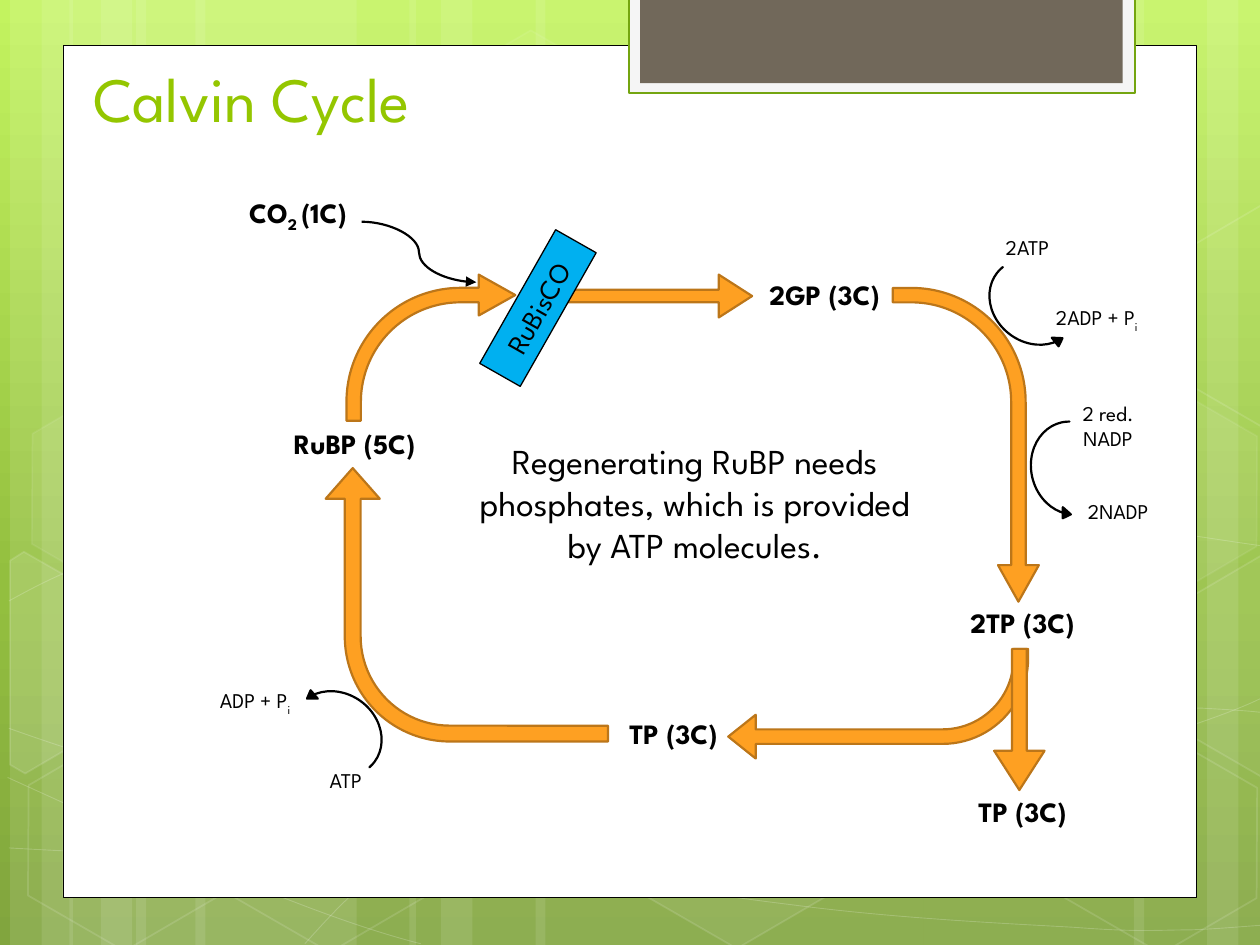
from copy import deepcopy
from pptx import Presentation
from pptx import util as u
from pptx.dml.color import RGBColor
from pptx.enum import shapes, text
from pptx.oxml.ns import qn
from lxml import etree

INCH = 2.54  # layout numbers are in inches, lengths are given in Cm
COLORS = dict(white="FFFFFF", black="000000", orange="FEA022", brown="BC7619",
              blue="00B0F0", lime="94C600", green="74A510", pale="F5F5F5", taupe="71685A")
KIND = shapes.MSO_SHAPE


def style(shape, fill=None, line=None, width=1.25, fill_alpha=100, line_alpha=100):
    """Set fill and outline; alpha values are percentages."""
    shape.shadow.inherit = False
    for target, color, alpha in ((shape.fill, fill, fill_alpha), (shape.line.fill, line, line_alpha)):
        if color is None:
            target.background()
            continue
        target.solid()
        target.fore_color.rgb = RGBColor.from_string(COLORS[color])
        if alpha < 100:
            parent = shape.element.spPr
            if target is not shape.fill:
                parent = parent.find(qn("a:ln"))
            clr = parent.find(qn("a:solidFill")).find(qn("a:srgbClr"))
            etree.SubElement(clr, qn("a:alpha")).set("val", str(alpha * 1000))
    if line:
        shape.line.width = u.Pt(width)


def write(shape, words, size, color="black", bold=False, align=text.PP_ALIGN.CENTER):
    """Fill a shape with text; pieces between underscores are subscripts."""
    frame = shape.text_frame
    frame.word_wrap = True
    for row, line in enumerate(words.split("\n")):
        para = frame.add_paragraph() if row else frame.paragraphs[0]
        para.alignment = align
        for index, piece in enumerate(line.split("_")):
            if not piece:
                continue
            span = para.add_run()
            span.text = piece
            for name, value in dict(name="League Spartan", size=u.Pt(size), bold=bold).items():
                setattr(span.font, name, value)
            span.font.color.rgb = RGBColor.from_string(COLORS[color])
            if index % 2:
                span.font._element.set("baseline", "-25000")


deck = Presentation()
deck.slide_width, deck.slide_height = u.Cm(10 * INCH), u.Cm(7.5 * INCH)
page = deck.slides.add_slide(deck.slide_layouts[6])

# Background gradient
backdrop = page.background.fill
backdrop.gradient()
backdrop.gradient_angle = 270
stop_list = next(page.element.iter(qn("a:gsLst")))
stop_list.append(deepcopy(stop_list[0]))
for stop, (position, color) in zip(backdrop.gradient_stops,
                                   ((0, "C3F35F"), (0.62, "93BF3F"), (1, "81A53E"))):
    stop.position = position
    stop.color.rgb = RGBColor.from_string(color)

# Translucent vertical bands
for left, width in ((1.08, 1.75), (0.08, 0.5), (0.33, 0.83), (1.55, 1.75), (0.55, 0.5), (0.8, 0.83),
                    (7.33, 1.75), (9.58, 0.5), (9, 0.83), (4.25, 3.08), (3.25, 0.5), (3.5, 0.83)):
    band = page.shapes.add_shape(KIND.RECTANGLE, u.Cm(left * INCH), 0,
                                 u.Cm(width * INCH), deck.slide_height)
    style(band, "white", fill_alpha=10)

# Faint waves: a start point, then two control points and an end point per segment
waves = (
    [(0.07, 6.73), (0.61, 6.76), (1.15, 6.79), (1.9, 6.78), (2.65, 6.77), (3.58, 6.75), (4.58, 6.65),
     (5.58, 6.55), (7, 6.36), (7.92, 6.17), (8.83, 5.98), (9.77, 5.68), (10.07, 5.51)],
    [(0.07, 4.77), (0.36, 4.61), (0.65, 4.46), (1.21, 4.31), (1.78, 4.16), (2.59, 3.94), (3.47, 3.87),
     (4.36, 3.8), (5.44, 3.79), (6.54, 3.87), (7.64, 3.95), (9.47, 4.26), (10.07, 4.34)],
    [(0.06, 6.17), (1.27, 6.72), (2.47, 7.27), (3.34, 7.49)],
    [(0.07, 5.78), (0.38, 5.89), (0.7, 6), (1.28, 6.16), (1.86, 6.31), (2.73, 6.56), (3.57, 6.73),
     (4.4, 6.9), (5.45, 7.08), (6.28, 7.18), (7.11, 7.29), (8, 7.33), (8.53, 7.36),
     (9.05, 7.4), (9.19, 7.38), (9.45, 7.38), (9.71, 7.37), (9.89, 7.35), (10.07, 7.34)],
    [(2.42, 7.49), (2.6, 7.29), (2.78, 7.09), (3.02, 6.91), (3.26, 6.73), (3.6, 6.53), (3.88, 6.39),
     (4.16, 6.25), (4.33, 6.19), (4.7, 6.09), (5.06, 5.99), (5.73, 5.85), (6.08, 5.78),
     (6.44, 5.71), (6.49, 5.71), (6.8, 5.69), (7.11, 5.66), (7.6, 5.63), (7.94, 5.62),
     (8.29, 5.61), (8.86, 5.62), (8.86, 5.62), (9.08, 5.62), (9.31, 5.62), (9.53, 5.62),
     (9.71, 5.63), (9.88, 5.64), (9.97, 5.65), (10.06, 5.66), (10.03, 5.65), (10.06, 5.66)],
)
for wave in waves:
    points = [(u.Cm(x * INCH), u.Cm(y * INCH)) for x, y in wave]
    builder = page.shapes.build_freeform(*points[0])
    builder.add_line_segments(points[1:], close=False)
    ripple = builder.convert_to_shape()
    style(ripple, line="white", width=0.5, line_alpha=20)
    # Join each three straight steps into one Bézier segment
    outline = next(ripple.element.iter(qn("a:path")))
    steps = outline.findall(qn("a:lnTo"))
    for first in range(0, len(steps), 3):
        curve = etree.SubElement(outline, qn("a:cubicBezTo"))
        for step in steps[first:first + 3]:
            curve.append(step[0])
            outline.remove(step)

# Hexagons, whole and cut by the page edge
for left, top, fill_alpha, line_alpha in (
        (3.34, 0.36, 4, 8), (4.97, 5.89, 6, 12), (0.11, 5.91, 0, 12), (0.14, 3.12, 7, 8),
        (1.74, 5.92, 0, 12), (7.53, 4.53, 10, 12), (8.34, 5.93, 0, 12), (8.34, 3.14, 7, 8)):
    cell = page.shapes.add_shape(KIND.HEXAGON, *(u.Cm(v * INCH) for v in (left, top, 1.75, 1.52)))
    cell.adjustments[0] = 0.285
    cell.rotation = 30
    style(cell, "white" if fill_alpha else None, "white", 1, fill_alpha, line_alpha)
for fill_alpha, corners in (
        (10, [(0.08, 4.45), (0.19, 4.38), (0.96, 4.82), (0.95, 5.7), (0.2, 6.14), (0.08, 6.07)]),
        (4, [(9.26, 4.85), (10.01, 4.41), (10.09, 4.46), (10.09, 6.13), (10.02, 6.17), (9.26, 5.73)]),
        (0, [(9.26, 2.07), (10.01, 1.63), (10.1, 1.68), (10.09, 3.35), (10.02, 3.39), (9.26, 2.95)])):
    points = [(u.Cm(x * INCH), u.Cm(y * INCH)) for x, y in corners]
    builder = page.shapes.build_freeform(*points[0])
    builder.add_line_segments(points[1:])
    style(builder.convert_to_shape(), "white" if fill_alpha else None, "white", 1, fill_alpha, 12)

# White panel and top tab
for place, fill, line, width in (((0.5, 0.36, 9, 6.76), "white", "black", 0.5),
                                 ((4.99, -0.02, 4.02, 0.76), "pale", "green", 1.25),
                                 ((5.08, -0.02, 3.83, 0.68), "taupe", None, 0)):
    panel = page.shapes.add_shape(KIND.RECTANGLE, *(u.Cm(v * INCH) for v in place))
    style(panel, fill, line, width)

# Title
title = page.shapes.add_textbox(*(u.Cm(v * INCH) for v in (0.64, 0.71, 7.68, 0.41)))
title.text_frame.vertical_anchor = text.MSO_ANCHOR.BOTTOM
write(title, "Calvin Cycle", 36, "lime", align=text.PP_ALIGN.LEFT)

# Cycle arrows, with the enzyme block lying over the first two
STRAIGHT, BEND = (0.291, 0.778), (0.099, 0.14, 0.25, 0.781)
for kind, place, turn, adjust in (
        (KIND.RIGHT_ARROW, (4.51, 2.18, 1.46, 0.34), 0, STRAIGHT),
        (KIND.BENT_ARROW, (2.75, 2.18, 1.34, 1.16), 0, BEND),
        (KIND.RECTANGLE, (3.66, 2.26, 1.22, 0.37), 299.6, ()),
        (KIND.BENT_ARROW, (6.42, 2.95, 2.49, 1.16), 90, BEND),
        (KIND.BENT_ARROW, (5.78, 5.15, 2.38, 0.87), 180, (0.133, 0.2, 0.25, 0.781)),
        (KIND.RIGHT_ARROW, (7.53, 5.51, 1.12, 0.4), 90, STRAIGHT),
        (KIND.BENT_ARROW, (2.62, 3.68, 2.17, 2.24), 270, (0.058, 0.099, 0.112, 0.385))):
    part = page.shapes.add_shape(kind, *(u.Cm(v * INCH) for v in place))
    part.rotation = turn
    for index, value in enumerate(adjust):
        part.adjustments[index] = value
    if kind == KIND.RECTANGLE:
        style(part, "blue", "black", 0.75)
        write(part, "RuBisCO", 16)
    else:
        style(part, "orange", "brown")

# Curved side arrows for cofactors
for left, top, turn in ((7.79, 2.03, 218.4), (8.09, 3.35, 257.6), (2.26, 5.46, 36.3)):
    arc = page.shapes.add_shape(KIND.CIRCULAR_ARROW, *(u.Cm(v * INCH) for v in (left, top, 0.83, 0.73)))
    for index, value in enumerate((0, 6.177, 201.788, 102.235, 0.06)):
        arc.adjustments[index] = value
    arc.rotation = turn
    arc.element.spPr.find(qn("a:xfrm")).set("flipH", "1")
    style(arc, "black", "black")

# Carbon dioxide inflow
inflow = page.shapes.add_connector(shapes.MSO_CONNECTOR.CURVE,
                                   *(u.Cm(v * INCH) for v in (2.87, 1.76, 3.78, 2.24)))
inflow.line.color.rgb = RGBColor.from_string(COLORS["black"])
inflow.line.width = u.Pt(1.25)
stroke = inflow.element.spPr.find(qn("a:ln"))
etree.SubElement(stroke, qn("a:tailEnd")).set("type", "triangle")
etree.SubElement(inflow.element.spPr, qn("a:effectLst"))

# Labels: compounds in bold, cofactors smaller
LABEL = 1.27
for size, bold, height, labels in (
        (16, True, 0.37, (("RuBP (5C)", 2.18, 3.34), ("CO_2 _(1C)", 1.73, 1.5), ("2GP (3C)", 5.91, 2.15),
                          ("2TP (3C)", 7.48, 4.76), ("TP (3C)", 7.48, 6.26), ("TP (3C)", 4.71, 5.64))),
        (12, False, 0.3, (("2ATP", 7.52, 1.81), ("2ADP + P_i", 8.07, 2.37), ("2 red.\nNADP", 8.16, 3.13),
                          ("2NADP", 8.24, 3.91), ("ATP", 2.11, 6.04), ("ADP + P_i", 1.39, 5.41)))):
    for words, left, top in labels:
        tall = height + 0.2 * words.count("\n")
        box = page.shapes.add_textbox(*(u.Cm(v * INCH) for v in (left, top, LABEL, tall)))
        write(box, words, size, bold=bold)

# Central statement
box = page.shapes.add_textbox(*(u.Cm(v * INCH) for v in (3.59, 3.44, 3.85, 1.45)))
write(box, "Regenerating RuBP needs phosphates, which is provided by ATP molecules.", 20)

deck.save("out.pptx")
